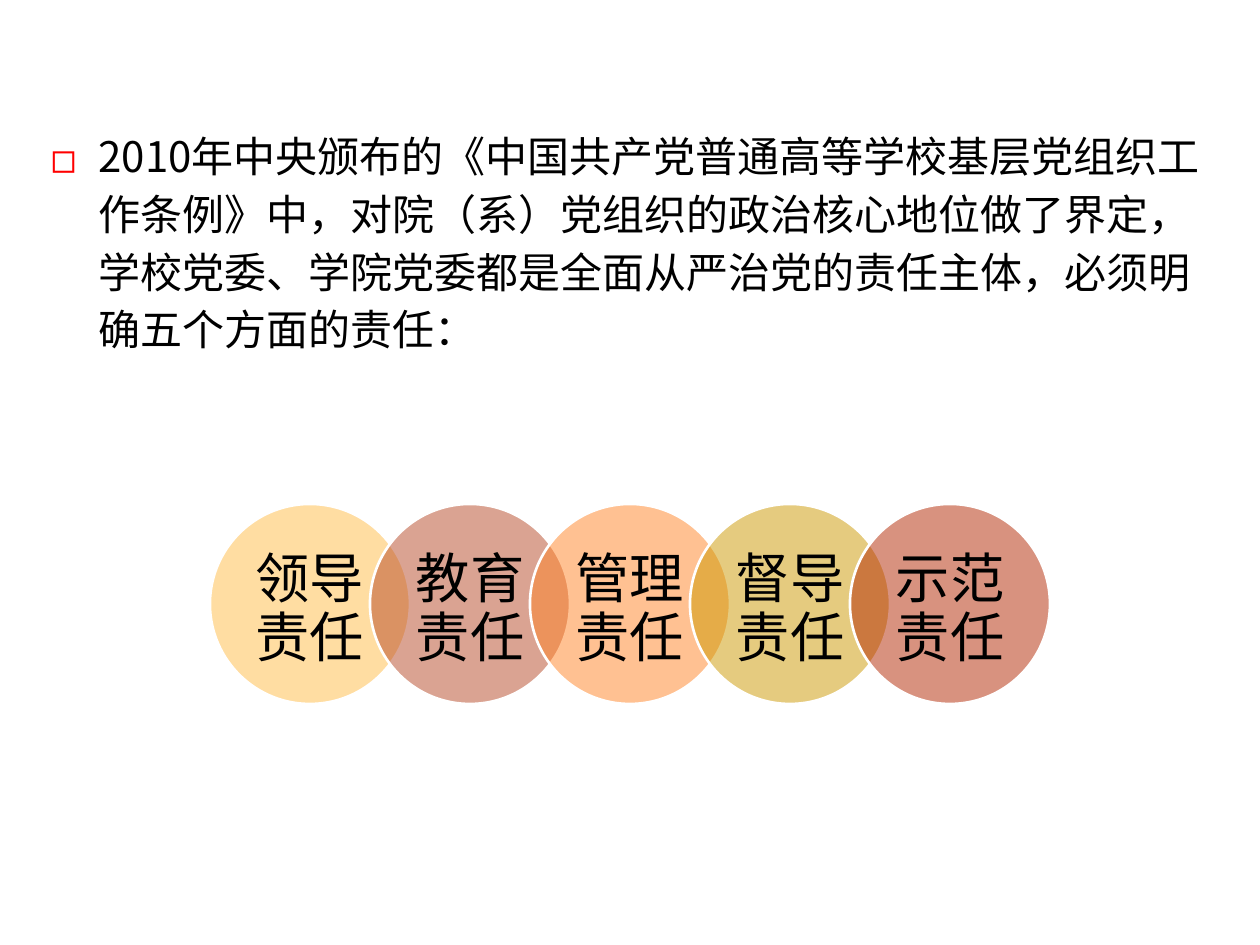
from lxml.etree import SubElement
from pptx import Presentation
from pptx.dml.color import RGBColor
from pptx.enum.shapes import MSO_SHAPE
from pptx.enum.text import MSO_ANCHOR, MSO_AUTO_SIZE, PP_ALIGN
from pptx.oxml.ns import qn
from pptx.util import Pt

INTRO = (
    "2010年中央颁布的《中国共产党普通高等学校基层党组织工作条例》中，"
    "对院（系）党组织的政治核心地位做了界定，"
    "学校党委、学院党委都是全面从严治党的责任主体，必须明确五个方面的责任："
)
DUTIES = [
    ("领导责任", "FFBD47"),
    ("教育责任", "B64926"),
    ("管理责任", "FF8427"),
    ("督导责任", "CC9900"),
    ("示范责任", "B22600"),
]
FONT = "Noto Sans CJK SC"
SLIDE_W, SLIDE_H = 1260, 945
INTRO_BOX = (38, 117, 1186, 244)
INTRO_INDENT = 48
CIRCLE, CIRCLE_STEP, CIRCLE_TOP = 200, 160, 504


def px(length):
    return round(length * 914400 / 126)


def color(hex_text):
    return RGBColor.from_string(hex_text)


def style_text(paragraph, size, line_height):
    paragraph.line_spacing = Pt(line_height)
    for run in paragraph.runs:
        run.font.size = Pt(size)
        run.font.name = FONT
        run.font.color.rgb = color("000000")
        SubElement(run.font._element, qn("a:ea"), typeface=FONT)


def add_bullet(paragraph, char, hex_text, indent):
    props = paragraph._p.get_or_add_pPr()
    props.set("marL", str(px(indent)))
    props.set("indent", str(-px(indent)))
    bullet_color = SubElement(props, qn("a:buClr"))
    SubElement(bullet_color, qn("a:srgbClr"), val=hex_text)
    SubElement(props, qn("a:buFont"), typeface=FONT)
    SubElement(props, qn("a:buChar"), char=char)


def add_intro(slide):
    intro = slide.placeholders[1]
    intro.left, intro.top, intro.width, intro.height = map(px, INTRO_BOX)
    frame = intro.text_frame
    frame.text = INTRO
    frame.auto_size = MSO_AUTO_SIZE.NONE
    paragraph = frame.paragraphs[0]
    add_bullet(paragraph, "◻", "FF0000", INTRO_INDENT)
    paragraph.space_before = Pt(0)
    paragraph.space_after = Pt(6)
    style_text(paragraph, 24, 33)


def add_duty(slide, left, label, hex_text):
    circle = slide.shapes.add_shape(
        MSO_SHAPE.OVAL, px(left), px(CIRCLE_TOP), px(CIRCLE), px(CIRCLE))
    circle.shadow.inherit = False
    circle.fill.solid()
    circle.fill.fore_color.rgb = color(hex_text)
    fill = circle._element.spPr.find(qn("a:solidFill"))
    SubElement(fill[0], qn("a:alpha"), val="50000")
    circle.line.color.rgb = color("FFFFFF")
    circle.line.width = Pt(1.5)

    frame = circle.text_frame
    frame.text = label
    frame.word_wrap = True
    frame.vertical_anchor = MSO_ANCHOR.MIDDLE
    frame.margin_left = frame.margin_right = px(11)
    frame.margin_top, frame.margin_bottom = px(15), px(5)
    paragraph = frame.paragraphs[0]
    paragraph.alignment = PP_ALIGN.CENTER
    style_text(paragraph, 31, 34)


def main():
    deck = Presentation()
    deck.slide_width, deck.slide_height = px(SLIDE_W), px(SLIDE_H)
    slide = deck.slides.add_slide(deck.slide_layouts[1])
    title = slide.shapes.title._element
    title.getparent().remove(title)

    add_intro(slide)
    row_width = CIRCLE + CIRCLE_STEP * (len(DUTIES) - 1)
    row_left = (SLIDE_W - row_width) // 2
    for index, (label, hex_text) in enumerate(DUTIES):
        add_duty(slide, row_left + index * CIRCLE_STEP, label, hex_text)
    deck.save("out.pptx")


if __name__ == "__main__":
    main()
